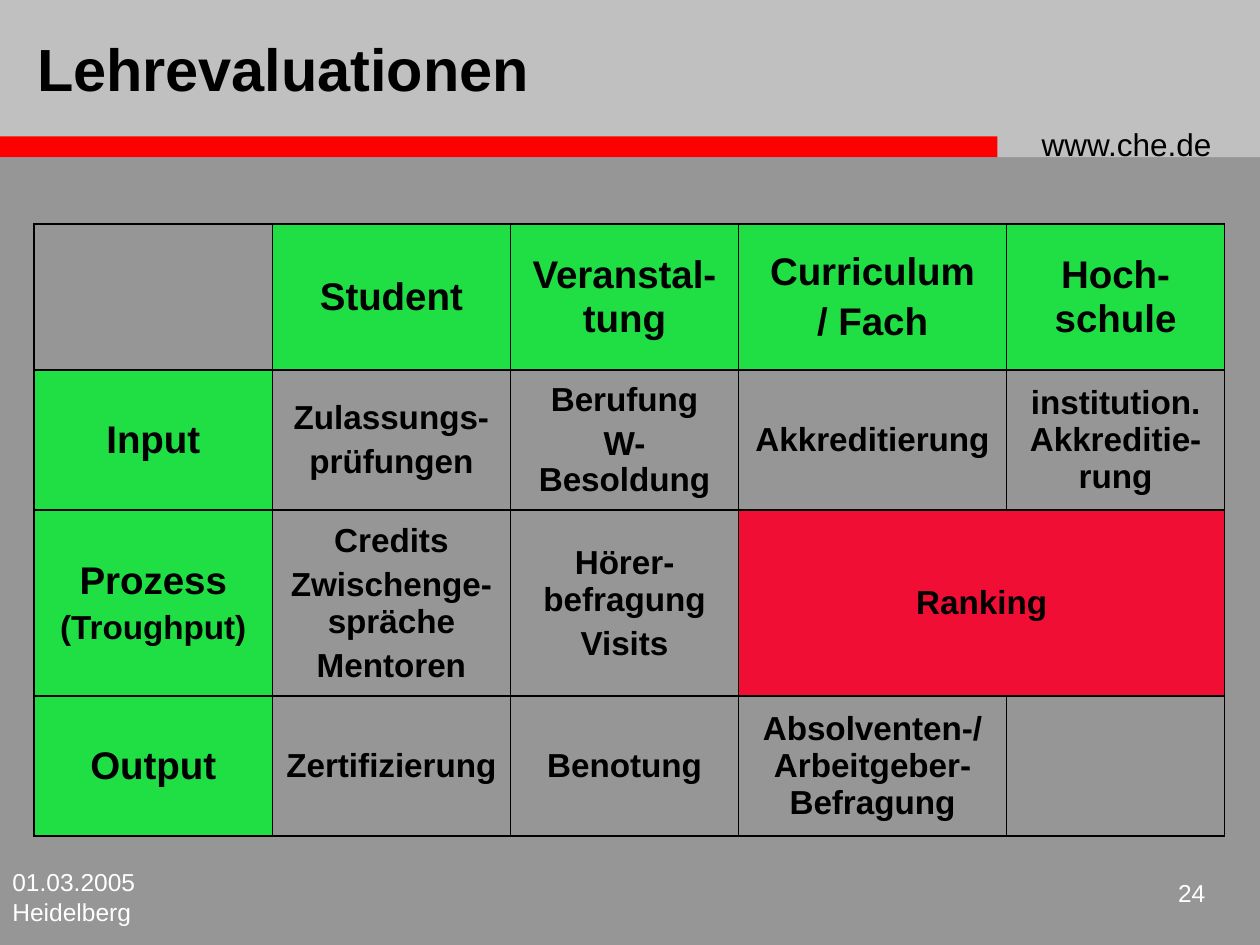
from lxml.etree import SubElement
from pptx import Presentation
from pptx.dml.color import RGBColor as RGB
from pptx.enum.shapes import MSO_SHAPE as Shape
from pptx.enum.text import MSO_ANCHOR as Anchor, PP_ALIGN as Align
from pptx.oxml.ns import qn
from pptx.util import Cm, Pt

COLORS = {"background": "969696", "band": "C0C0C0", "bar": "FF0000",
          "header": "1FDF44", "ranking": "F00E34",
          "dark": "000000", "light": "FFFFFF"}


def style(paragraph, size, color="dark", bold=False, align=Align.LEFT):
    paragraph.alignment = align
    font = paragraph.font
    font.name, font.size, font.bold = "Arial", Pt(size), bold
    font.color.rgb = RGB.from_string(COLORS[color])


prs = Presentation()
prs.slide_width, prs.slide_height = Cm(25.4), Cm(19.05)
slide = prs.slides.add_slide(prs.slide_layouts[6])
slide.background.fill.solid()
slide.background.fill.fore_color.rgb = RGB.from_string(COLORS["background"])

# Head band and red bar
for color, top, width, height in [("band", 0, 25.4, 3.17),
                                  ("bar", 2.75, 20.11, 0.42)]:
    stripe = slide.shapes.add_shape(Shape.RECTANGLE, 0, Cm(top), Cm(width), Cm(height))
    stripe.shadow.inherit = False
    stripe.fill.solid()
    stripe.fill.fore_color.rgb = RGB.from_string(COLORS[color])
    stripe.line.fill.background()

# Title, web address, date and page number
for text, left, top, width, height, size, color, bold, align, anchor in [
    ("Lehrevaluationen", 0.5, 0, 20.04, 2.75, 34, "dark", True, Align.LEFT, Anchor.MIDDLE),
    ("www.che.de", 20.75, 2.39, 4.45, 1.02, 18, "dark", False, Align.LEFT, Anchor.TOP),
    ("01.03.2005 Heidelberg", 0, 17.36, 5.29, 1.27, 14, "light", False, Align.LEFT, Anchor.TOP),
    ("24", 23.07, 17.57, 1.48, 1.06, 14, "light", False, Align.RIGHT, Anchor.TOP),
]:
    frame = slide.shapes.add_textbox(Cm(left), Cm(top), Cm(width), Cm(height)).text_frame
    frame.word_wrap = True
    frame.vertical_anchor = anchor
    frame.text = text
    style(frame.paragraphs[0], size, color, bold, align)

# Evaluation matrix: one paragraph per line of a cell
matrix = [
    ["", "Student", "Veranstal-tung", "Curriculum\n/ Fach", "Hoch-schule"],
    ["Input", "Zulassungs-\nprüfungen", "Berufung\nW-Besoldung",
     "Akkreditierung", "institution. Akkreditie-rung"],
    ["Prozess\n(Troughput)", "Credits\nZwischenge-spräche\nMentoren",
     "Hörer-befragung\nVisits", "Ranking", ""],
    ["Output", "Zertifizierung", "Benotung", "Absolventen-/Arbeitgeber-Befragung", ""],
]
col_widths = [4.8, 4.8, 4.6, 5.4, 4.4]
row_heights = [2.94, 2.82, 3.75, 2.82]
table = slide.shapes.add_table(len(row_heights), len(col_widths), Cm(0.69), Cm(4.52),
                               Cm(sum(col_widths)), Cm(sum(row_heights))).table
table.first_row = table.horz_banding = False
for column, width in zip(table.columns, col_widths):
    column.width = Cm(width)
for row, height in zip(table.rows, row_heights):
    row.height = Cm(height)

for r, texts in enumerate(matrix):
    for c, text in enumerate(texts):
        cell = table.cell(r, c)
        cell.vertical_anchor = Anchor.MIDDLE
        is_header = (r == 0) != (c == 0)

        # Borders
        properties = cell._tc.get_or_add_tcPr()
        for side in ("a:lnL", "a:lnR", "a:lnT", "a:lnB"):
            border = SubElement(properties, qn(side), w=str(Pt(1)))
            solid = SubElement(border, qn("a:solidFill"))
            SubElement(solid, qn("a:srgbClr"), val=COLORS["dark"])

        # Fill
        if is_header or text == "Ranking":
            cell.fill.solid()
            cell.fill.fore_color.rgb = RGB.from_string(
                COLORS["header" if is_header else "ranking"])
        else:
            cell.fill.background()

        # Text
        cell.text = text
        for i, paragraph in enumerate(cell.text_frame.paragraphs):
            is_large = is_header and not paragraph.text.startswith("(")
            style(paragraph, 22 if is_large else 19, bold=True, align=Align.CENTER)
            if i:
                paragraph.space_before = Pt(4)

# Ranking covers curriculum and university
table.cell(2, 3).merge(table.cell(2, 4))

prs.save("out.pptx")
